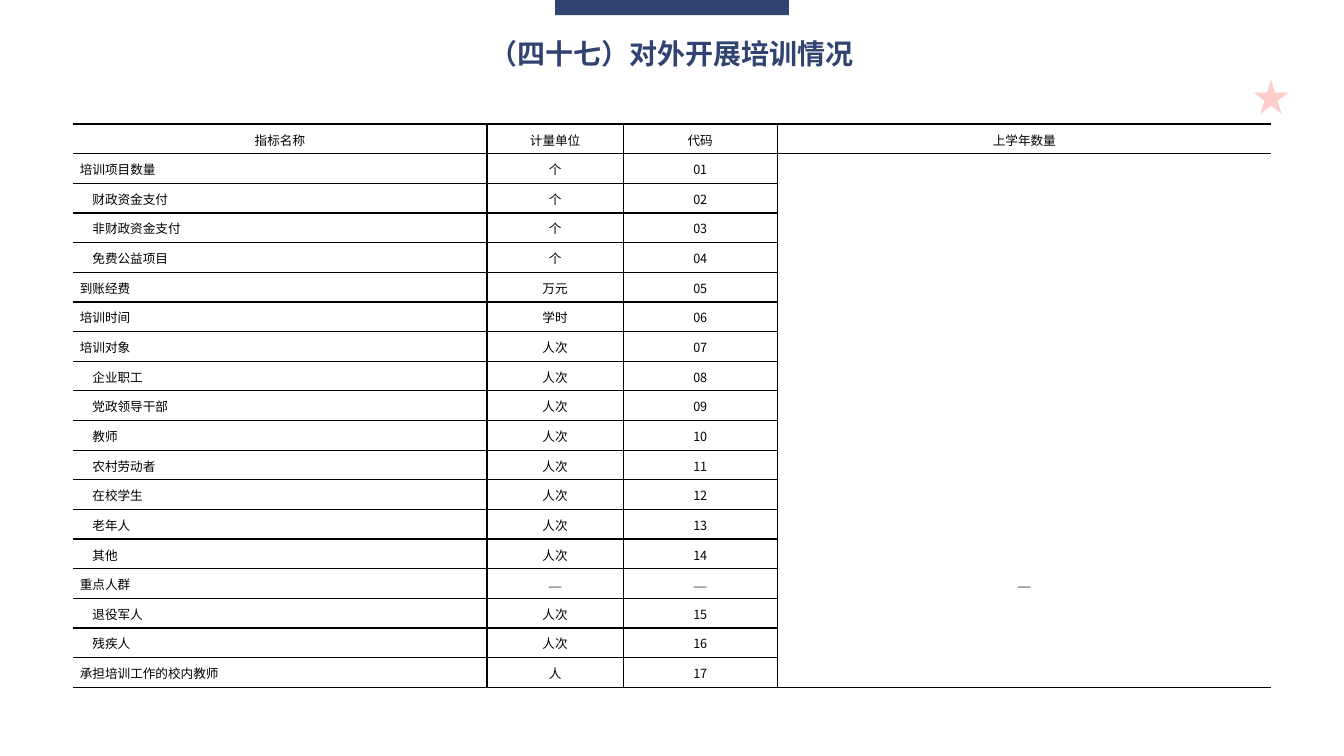
from lxml import etree
from pptx import Presentation
from pptx.dml.color import RGBColor
from pptx.enum.shapes import MSO_SHAPE
from pptx.enum.text import MSO_ANCHOR, MSO_AUTO_SIZE, PP_ALIGN
from pptx.oxml.ns import qn
from pptx.util import Pt

STAR, RECT = MSO_SHAPE.STAR_5_POINT, MSO_SHAPE.RECTANGLE
CENTER, JUSTIFY = PP_ALIGN.CENTER, PP_ALIGN.JUSTIFY
MIDDLE = MSO_ANCHOR.MIDDLE
GROW = MSO_AUTO_SIZE.SHAPE_TO_FIT_TEXT
COLORS = {"navy": "304371", "red": "FF0000", "black": "000000"}
SERIF, SANS, HEAD = "Times New Roman", "Noto Sans CJK SC", "Arial"
DASH = "—"

TITLE = "（四十七）对外开展培训情况"
HEADER = ("指标名称", "计量单位", "代码", "上学年数量")
WIDTHS = (295.92, 97.2, 110.16, 352.8)
ROW_H = 21.18
# Name, unit, indented; codes count up and skip the dashed row
ITEMS = [
    ("培训项目数量", "个", False),
    ("财政资金支付", "个", True),
    ("非财政资金支付", "个", True),
    ("免费公益项目", "个", True),
    ("到账经费", "万元", False),
    ("培训时间", "学时", False),
    ("培训对象", "人次", False),
    ("企业职工", "人次", True),
    ("党政领导干部", "人次", True),
    ("教师", "人次", True),
    ("农村劳动者", "人次", True),
    ("在校学生", "人次", True),
    ("老年人", "人次", True),
    ("其他", "人次", True),
    ("重点人群", DASH, False),
    ("退役军人", "人次", True),
    ("残疾人", "人次", True),
    ("承担培训工作的校内教师", "人", False),
]


def color(name):
    return RGBColor.from_string(COLORS[name])


def style(font, name, size, tint, bold=False):
    font.name, font.size, font.bold = name, Pt(size), bold
    font.color.rgb = color(tint)


def add_mark(slide, kind, box, tint, alpha=None):
    mark = slide.shapes.add_shape(kind, *map(Pt, box))
    mark.shadow.inherit = False
    mark.fill.solid()
    mark.fill.fore_color.rgb = color(tint)
    mark.line.fill.background()
    if alpha is not None:
        tone = mark.fill._xPr.find(".//" + qn("a:srgbClr"))
        etree.SubElement(tone, qn("a:alpha"), val=str(alpha * 1000))


def add_title(slide, text, box):
    frame = slide.shapes.add_textbox(*map(Pt, box)).text_frame
    frame.word_wrap = False
    frame.auto_size = GROW
    para = frame.paragraphs[0]
    para.text, para.alignment = text, CENTER
    style(para.font, HEAD, 20, "navy", True)


def set_edges(cell, edges):
    props = cell._tc.get_or_add_tcPr()
    for side in "LRTB":
        line = etree.SubElement(props, qn("a:ln" + side), w=str(Pt(1)))
        if side in edges:
            fill = etree.SubElement(line, qn("a:solidFill"))
            etree.SubElement(fill, qn("a:srgbClr"), val=COLORS["black"])
        else:
            etree.SubElement(line, qn("a:noFill"))


def fill_cell(cell, text, edges, align=CENTER, indent=False):
    set_edges(cell, edges)
    cell.fill.background()
    cell.vertical_anchor = MIDDLE
    cell.margin_left = cell.margin_right = Pt(5.04)
    cell.margin_top = cell.margin_bottom = 0
    para = cell.text_frame.paragraphs[0]
    para.text, para.alignment = text, align
    para.line_spacing = Pt(14)
    if indent:
        para._p.get_or_add_pPr().set("indent", str(Pt(9)))
    style(para.font, SANS if text.isdigit() else SERIF, 9, "black")


def add_grid(slide, left, top):
    count = len(ITEMS) + 1
    table = slide.shapes.add_table(
        count, len(WIDTHS), Pt(left), Pt(top), Pt(sum(WIDTHS)), Pt(count * ROW_H)
    ).table
    table.first_row = table.horz_banding = False
    for col, width in zip(table.columns, WIDTHS):
        col.width = Pt(width)
    for row in table.rows:
        row.height = Pt(ROW_H)

    # Header row
    for col, (text, edges) in enumerate(zip(HEADER, ("RTB", "LRTB", "LRTB", "LTB"))):
        fill_cell(table.cell(0, col), text, edges)

    # Item rows; the last column is open inside
    code = 0
    for row, (name, unit, indent) in enumerate(ITEMS, 1):
        dashed = unit == DASH
        code += not dashed
        fill_cell(table.cell(row, 0), name, "RTB", JUSTIFY, indent)
        fill_cell(table.cell(row, 1), unit, "LRTB")
        fill_cell(table.cell(row, 2), DASH if dashed else f"{code:02}", "LRTB")
        edges = "L" + "T" * (row == 1) + "B" * (row == len(ITEMS))
        fill_cell(table.cell(row, 3), DASH if dashed else "", edges)


def main():
    deck = Presentation()
    deck.slide_width, deck.slide_height = Pt(960), Pt(540)
    slide = deck.slides.add_slide(deck.slide_layouts[6])
    # Decoration
    add_mark(slide, STAR, (895.7, 56.9, 24.5, 24.5), "red", 20)
    add_mark(slide, RECT, (396.5, -0.7, 167, 11.5), "navy")
    # Content
    add_title(slide, TITLE, (341.3, 22.3, 277.2, 31.7))
    add_grid(slide, 52, 88.6)
    deck.save("out.pptx")


if __name__ == "__main__":
    main()
